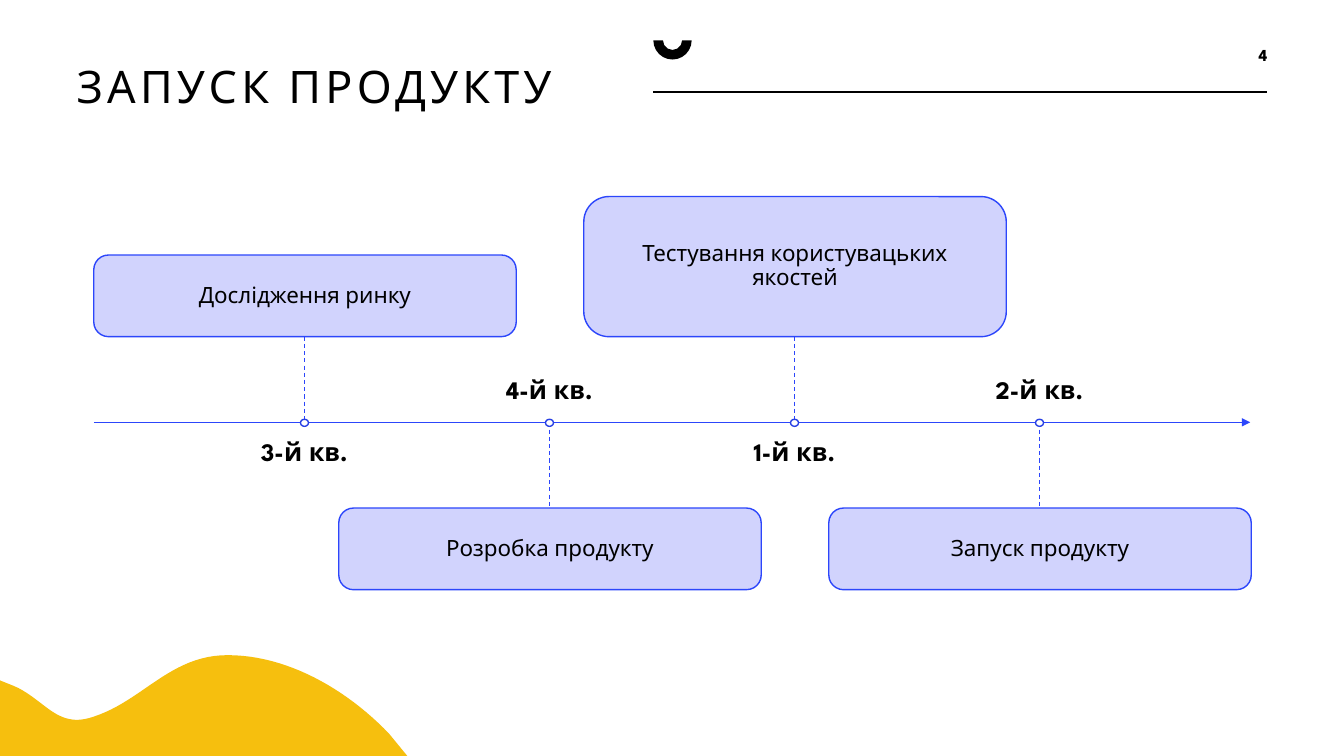
from pptx import Presentation
from pptx import util as u
from pptx.dml.color import RGBColor
from pptx.enum import dml, shapes, text
from pptx.oxml.ns import qn
from lxml import etree

PX = 9144
BLACK = RGBColor(0x00, 0x00, 0x00)
WHITE = RGBColor(0xFF, 0xFF, 0xFF)
YELLOW = RGBColor(0xF6, 0xBF, 0x0E)
LAVENDER = RGBColor(0xCD, 0xCF, 0xFD)
BLUE = RGBColor(0x2C, 0x46, 0xFB)
DARK_BLUE = RGBColor(0x28, 0x40, 0xE4)
FONT = "League Spartan"

AXIS_Y, AXIS_LEFT, AXIS_RIGHT = 419, 93, 1240
FIRST_X, STEP = 302, 243
CARD_WIDTH, CARD_GAP = 419, 85
LABEL_WIDTH, LABEL_HEIGHT, LABEL_GAP = 368, 50, 17
MILESTONES = [
    ("3-й кв.", "Дослідження ринку", 81, True),
    ("4-й кв.", "Розробка продукту", 81, False),
    ("1-й кв.", "Тестування користувацьких якостей", 139, True),
    ("2-й кв.", "Запуск продукту", 81, False),
]
WAVE_LEFT = [
    ((0, 675), (7, 678), (13, 680), (19, 683)),
    ((19, 683), (47, 698), (59, 723), (93, 711)),
    ((93, 711), (142, 695), (169, 650), (226, 650)),
    ((226, 650), (284, 650), (343, 683), (386, 728)),
]


def px(*lengths):
    return [u.Emu(length * PX) for length in lengths]


def paint(shape, fill, line=None, width=1):
    shape.shadow.inherit = False
    shape.fill.solid()
    shape.fill.fore_color.rgb = fill
    if line is None:
        shape.line.fill.background()
    else:
        shape.line.color.rgb = line
        shape.line.width = u.Pt(width)


def write(shape, words, size, align, anchor, insets=(0, 0, 0, 0), bold=False, spacing=0.9):
    frame = shape.text_frame
    frame.text = words
    frame.word_wrap = True
    frame.auto_size = text.MSO_AUTO_SIZE.NONE
    frame.vertical_anchor = anchor
    (frame.margin_left, frame.margin_top,
     frame.margin_right, frame.margin_bottom) = px(*insets)
    paragraph = frame.paragraphs[0]
    paragraph.alignment = align
    paragraph.line_spacing = spacing
    font = paragraph.runs[0].font
    font.name, font.size, font.bold = FONT, u.Pt(size), bold
    font.color.rgb = BLACK
    return paragraph.runs[0]


def add_line(slide, start, end, color, width, dashed=False, arrow=False):
    line = slide.shapes.add_connector(
        shapes.MSO_CONNECTOR.STRAIGHT, *px(*start, *end))
    line.line.color.rgb = color
    line.line.width = u.Pt(width)
    if dashed:
        line.line.dash_style = dml.MSO_LINE.DASH
    if arrow:
        etree.SubElement(line.line._get_or_add_ln(), qn("a:tailEnd"), type="triangle")
    etree.SubElement(line._element.spPr, qn("a:effectLst"))


def curve_points(curve, steps=24):
    for step in range(1, steps + 1):
        t = step / steps
        weights = ((1 - t) ** 3, 3 * t * (1 - t) ** 2, 3 * t * t * (1 - t), t ** 3)
        yield tuple(round(sum(w * p[axis] for w, p in zip(weights, curve)) * PX)
                    for axis in (0, 1))


def add_wave(slide):
    builder = slide.shapes.build_freeform(*px(0, 675))
    for curve in WAVE_LEFT:
        builder.add_line_segments(list(curve_points(curve)), close=False)
    builder.add_line_segments([px(404, 750), px(0, 750)], close=True)
    paint(builder.convert_to_shape(), YELLOW)


def add_header(slide):
    add_line(slide, (648, 91), (1257, 91), BLACK, 1.5)
    arc = slide.shapes.add_shape(shapes.MSO_SHAPE.BLOCK_ARC, *px(648, 21, 38, 38))
    arc.rotation = 180
    paint(arc, BLACK)
    title = slide.shapes.title
    title.left, title.top, title.width, title.height = px(76, 59, 545, 196)
    heading = write(title, "ЗАПУСК ПРОДУКТУ", 32, text.PP_ALIGN.LEFT,
                    text.MSO_ANCHOR.TOP, (0, 5, 10, 5))
    heading._r.get_or_add_rPr().set("spc", "300")
    number = slide.shapes.add_textbox(*px(1219, 17, 38, 52))
    write(number, "4", 12, text.PP_ALIGN.RIGHT, text.MSO_ANCHOR.BOTTOM,
          (0, 5, 0, 5), bold=True, spacing=1.0)


def add_card(slide, x, top, height, words):
    card = slide.shapes.add_shape(
        shapes.MSO_SHAPE.ROUNDED_RECTANGLE,
        *px(x - CARD_WIDTH // 2, top, CARD_WIDTH, height))
    card.adjustments[0] = 0.18
    paint(card, LAVENDER, BLUE)
    color = card._element.spPr.find(qn("a:solidFill"))[0]
    etree.SubElement(color, qn("a:alpha"), val="90000")
    write(card, words, 16, text.PP_ALIGN.CENTER, text.MSO_ANCHOR.MIDDLE, (20, 20, 20, 20))


def add_milestone(slide, x, quarter, stage, height, card_above):
    if card_above:
        edge = AXIS_Y - CARD_GAP
        card_top, label_top = edge - height, AXIS_Y + LABEL_GAP
        anchor = text.MSO_ANCHOR.TOP
    else:
        edge = AXIS_Y + CARD_GAP
        card_top, label_top = edge, AXIS_Y - LABEL_GAP - LABEL_HEIGHT
        anchor = text.MSO_ANCHOR.BOTTOM
    add_card(slide, x, card_top, height, stage)
    add_line(slide, (x, min(edge, AXIS_Y)), (x, max(edge, AXIS_Y)), BLUE, 0.75, dashed=True)
    label = slide.shapes.add_textbox(
        *px(x - LABEL_WIDTH // 2, label_top, LABEL_WIDTH, LABEL_HEIGHT))
    write(label, quarter, 18, text.PP_ALIGN.CENTER, anchor, bold=True)
    dot = slide.shapes.add_shape(shapes.MSO_SHAPE.OVAL, *px(x - 4, AXIS_Y - 3, 8, 7))
    paint(dot, WHITE, DARK_BLUE)


def main():
    deck = Presentation()
    deck.slide_width, deck.slide_height = px(1333, 750)
    slide = deck.slides.add_slide(deck.slide_layouts[5])
    add_wave(slide)
    add_header(slide)
    add_line(slide, (AXIS_LEFT, AXIS_Y), (AXIS_RIGHT, AXIS_Y), BLUE, 1, arrow=True)
    for index, milestone in enumerate(MILESTONES):
        add_milestone(slide, FIRST_X + index * STEP, *milestone)
    deck.save("out.pptx")


if __name__ == "__main__":
    main()
